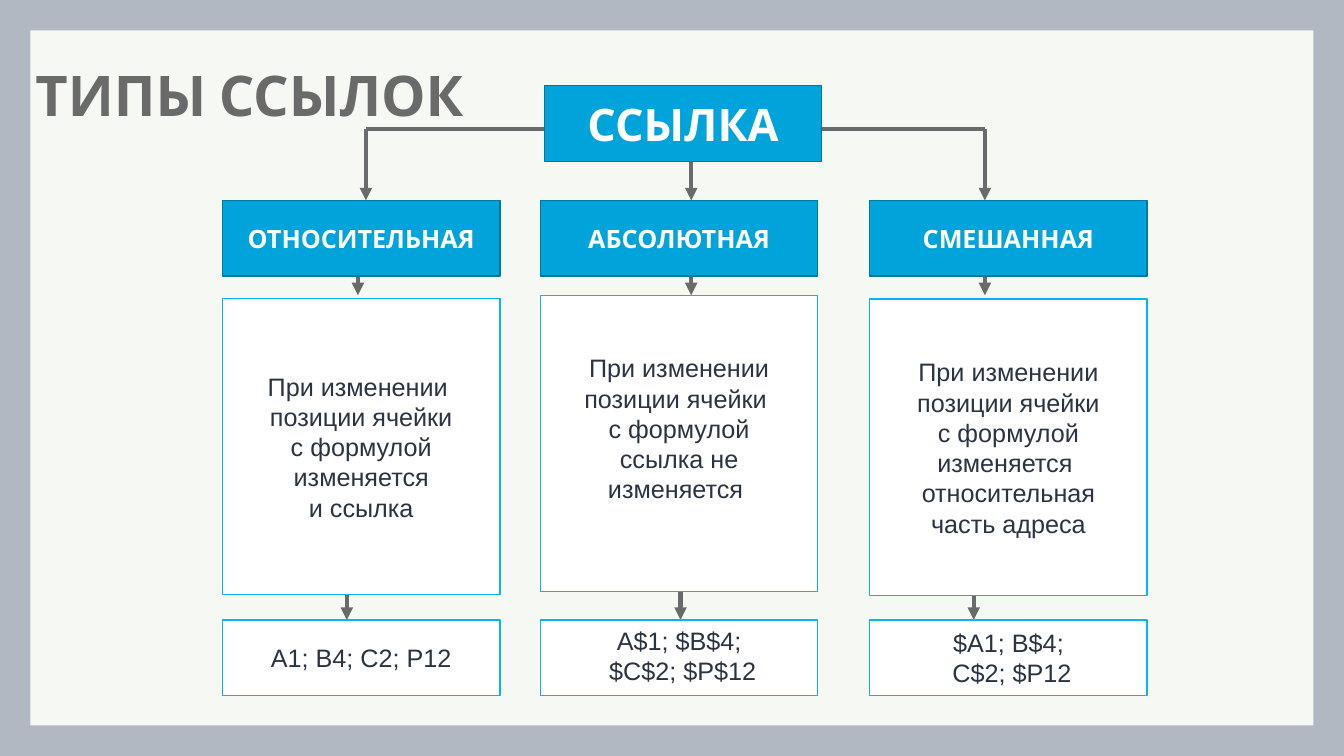
from dataclasses import dataclass
from pptx import Presentation
from pptx import util as u
from pptx.dml import color as co
from pptx.enum import shapes as sh, text as tx
from pptx.oxml import ns, xmlchemy as xc
from pptx import oxml


@dataclass(frozen=True)
class Theme:
    back: str = "F6F8F3"
    frame: str = "B2B8C2"
    grey: str = "6A6A6A"
    blue: str = "00A3DA"
    edge: str = "0079A1"
    sky: str = "0AB5EC"
    white: str = "FFFFFF"
    ink: str = "2A3442"
    bold: str = "Cabin"
    plain: str = "Arial"
    title: int = 40
    root: int = 32
    text: int = 18
    rule: int = 3


@dataclass(frozen=True)
class Style:
    fill: str
    line: str
    ink: str
    font: str
    size: int
    bold: bool


@dataclass(frozen=True)
class Box:
    left: float
    top: float
    high: float
    lines: tuple[str, ...]
    style: Style
    anchor: tx.MSO_ANCHOR = tx.MSO_ANCHOR.MIDDLE
    pad: float = 0.13


@dataclass(frozen=True)
class Link:
    x1: float
    y1: float
    x2: float
    y2: float
    arrow: bool = True


@dataclass(frozen=True)
class Branch:
    left: float
    stems: tuple[float, float, float]
    start: float
    top: float
    name: str
    rule: tuple[str, ...]
    cells: tuple[str, ...]
    pad: float = 0.13
    anchor: tx.MSO_ANCHOR = tx.MSO_ANCHOR.MIDDLE


T = Theme()
ROOT = Style(T.blue, T.edge, T.white, T.bold, T.root, True)
HEAD = Style(T.blue, T.edge, T.white, T.bold, T.text, True)
NOTE = Style(T.white, T.sky, T.ink, T.plain, T.text, False)

PAGE_W, PAGE_H, RIM = 33.87, 19.05, 0.77
BOX_W, BOX_H, NOTE_H = 6.99, 1.91, 7.47
HEAD_Y, NOTE_Y, CELL_Y = 5.05, 7.44, 15.62
ROOT_X, ROOT_Y, RAIL_Y = 13.72, 2.16, 3.25

BRANCHES = (
    Branch(5.61, (9.22, 9.02, 8.74), RAIL_Y, 7.52, "ОТНОСИТЕЛЬНАЯ",
           ("При изменении ", "позиции ячейки", "с формулой", "изменяется", "и ссылка"),
           ("А1; В4; С2; Р12",)),
    Branch(13.62, (17.42, 17.42, 17.15), ROOT_Y + BOX_H, 7.44, "АБСОЛЮТНАЯ",
           ("При изменении", "позиции ячейки ", "с формулой", "ссылка не", "изменяется "),
           ("А$1; $В$4;", " $С$2; $Р$12"), 0.89, tx.MSO_ANCHOR.TOP),
    Branch(21.92, (24.82, 24.82, 24.54), RAIL_Y, 7.54, "СМЕШАННАЯ",
           ("При изменении", "позиции ячейки", "с формулой", "изменяется ",
            "относительная", "часть адреса"),
           ("$А1; В$4;", " С$2; $Р12")),
)


def tint(name: str) -> co.RGBColor:
    return co.RGBColor.from_string(name)


def write(para, words: str, style: Style) -> None:
    run = para.add_run()
    run.text = words
    font = run.font
    font.name, font.size, font.bold = style.font, u.Pt(style.size), style.bold
    font.color.rgb = tint(style.ink)


def block(slide, left: float, top: float, wide: float, high: float, fill: str):
    form = slide.shapes.add_shape(sh.MSO_SHAPE.RECTANGLE,
                                  u.Cm(left), u.Cm(top), u.Cm(wide), u.Cm(high))
    form.shadow.inherit = False
    form.fill.solid()
    form.fill.fore_color.rgb = tint(fill)
    form.line.fill.background()
    return form


def draw_box(slide, box: Box) -> None:
    form = block(slide, box.left, box.top, BOX_W, box.high, box.style.fill)
    form.line.color.rgb = tint(box.style.line)
    form.line.width = u.Pt(1)
    frame = form.text_frame
    frame.word_wrap = True
    frame.vertical_anchor = box.anchor
    frame.margin_bottom = u.Cm(box.pad)
    for i, words in enumerate(box.lines):
        para = frame.add_paragraph() if i else frame.paragraphs[0]
        para.alignment = tx.PP_ALIGN.CENTER
        write(para, words, box.style)


def draw_link(slide, link: Link) -> None:
    wire = slide.shapes.add_connector(sh.MSO_CONNECTOR.STRAIGHT, u.Cm(link.x1),
                                      u.Cm(link.y1), u.Cm(link.x2), u.Cm(link.y2))
    wire.line.color.rgb = tint(T.grey)
    wire.line.width = u.Pt(T.rule)
    props = wire.element.spPr
    if link.arrow:
        tip = oxml.parse_xml(f'<a:tailEnd {ns.nsdecls("a")} type="triangle"/>')
        props.find(ns.qn("a:ln")).append(tip)
    props.append(oxml.parse_xml(f'<a:effectLst {ns.nsdecls("a")}/>'))


def draw_title(slide) -> None:
    title = slide.shapes.title
    title.left, title.top = u.Cm(0.64), u.Cm(1.19)
    title.width, title.height = u.Cm(22.63), u.Cm(2.59)
    frame = title.text_frame
    frame.word_wrap = True
    frame.auto_size = tx.MSO_AUTO_SIZE.NONE
    frame.vertical_anchor = tx.MSO_ANCHOR.MIDDLE
    para = frame.paragraphs[0]
    para.alignment = tx.PP_ALIGN.LEFT
    para.line_spacing = 0.9
    write(para, "ТИПЫ ССЫЛОК", Style(T.back, T.back, T.grey, T.bold, T.title, True))


def draw_rim(slide) -> None:
    for top in (0, PAGE_H - RIM):
        block(slide, 0, top, PAGE_W, RIM, T.frame)
    for left in (0, PAGE_W - RIM):
        block(slide, left, 0, RIM, PAGE_H, T.frame)


def main() -> None:
    deck = Presentation()
    deck.slide_width, deck.slide_height = u.Cm(PAGE_W), u.Cm(PAGE_H)
    slide = deck.slides.add_slide(deck.slide_layouts[5])
    slide.background.fill.solid()
    slide.background.fill.fore_color.rgb = tint(T.back)
    draw_rim(slide)
    draw_title(slide)

    links = [Link(ROOT_X, RAIL_Y, BRANCHES[0].stems[0], RAIL_Y, False),
             Link(ROOT_X + BOX_W, RAIL_Y, BRANCHES[-1].stems[0], RAIL_Y, False)]
    boxes = [Box(ROOT_X, ROOT_Y, BOX_H, ("ССЫЛКА",), ROOT)]
    for b in BRANCHES:
        one, two, three = b.stems
        links += [Link(one, b.start, one, HEAD_Y),
                  Link(two, HEAD_Y + BOX_H, two, NOTE_Y),
                  Link(three, b.top + NOTE_H, three, CELL_Y)]
        boxes += [Box(b.left, HEAD_Y, BOX_H, (b.name,), HEAD),
                  Box(b.left, b.top, NOTE_H, b.rule, NOTE, pad=b.pad),
                  Box(b.left, CELL_Y, BOX_H, b.cells, NOTE, b.anchor)]
    for link in links:
        draw_link(slide, link)
    for box in boxes:
        draw_box(slide, box)
    deck.save("out.pptx")


if __name__ == "__main__":
    main()
